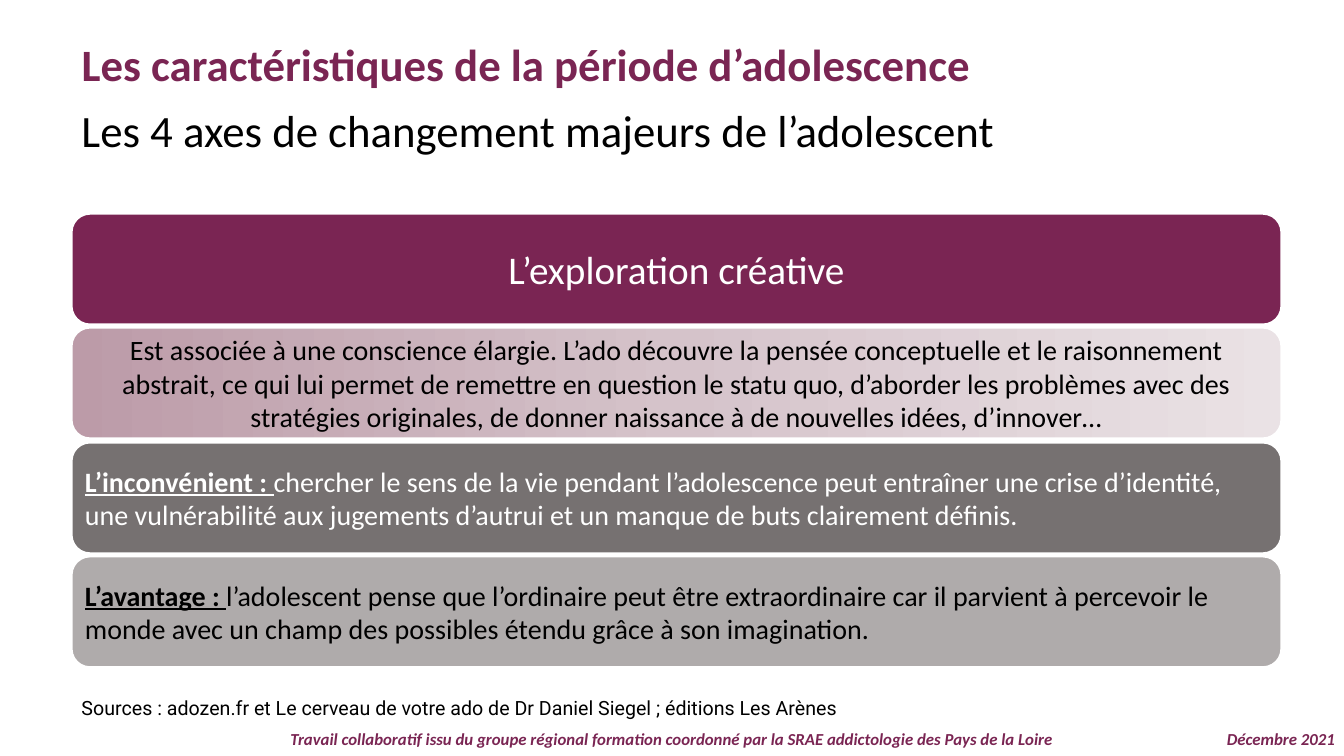
from copy import deepcopy

from pptx import Presentation
from pptx import util as u
from pptx.dml.color import RGBColor
from pptx.enum import shapes, text
from pptx.oxml.ns import qn

PX = 9144
PLUM, BLACK, WHITE = "7A2553", "000000", "FFFFFF"
LEFT, CENTER, RIGHT = text.PP_ALIGN.LEFT, text.PP_ALIGN.CENTER, text.PP_ALIGN.RIGHT
TOP, MIDDLE = text.MSO_ANCHOR.TOP, text.MSO_ANCHOR.MIDDLE


def px(n):
    return u.Emu(n * PX)


def rgb(value):
    return RGBColor.from_string(value)


class Deck:
    """Holds the style and the current slide, and draws its elements."""

    family = "Calibri"

    def __init__(self, width, height):
        self.prs = Presentation()
        self.prs.slide_width, self.prs.slide_height = px(width), px(height)
        self.slide = self.prs.slides.add_slide(self.prs.slide_layouts[5])

    def set_text(self, shape, runs, size, color, align=LEFT, anchor=TOP,
                 inset=None, family=None, **spacing):
        frame = shape.text_frame
        layout = {"word_wrap": True, "auto_size": text.MSO_AUTO_SIZE.NONE,
                  "vertical_anchor": anchor}
        if inset is not None:
            sides = ("left", "top", "right", "bottom")
            layout.update({f"margin_{side}": px(inset) for side in sides})
        for key, value in layout.items():
            setattr(frame, key, value)
        paragraph = frame.paragraphs[0]
        for key, value in {"alignment": align, **spacing}.items():
            setattr(paragraph, key, value)
        for words, emphasis in runs:
            run = paragraph.add_run()
            run.text = words
            style = {"name": family or self.family, "size": u.Pt(size), **emphasis}
            for key, value in style.items():
                setattr(run.font, key, value)
            run.font.color.rgb = rgb(color)

    def title(self, box, words, size, color):
        heading = self.slide.shapes.title
        for key, value in zip(("left", "top", "width", "height"), box):
            setattr(heading, key, px(value))
        self.set_text(heading, [(words, {"bold": True})], size, color)

    def label(self, box, words, size, color, emphasis=None, **style):
        textbox = self.slide.shapes.add_textbox(*map(px, box))
        self.set_text(textbox, [(words, emphasis or {})], size, color, **style)

    def band(self, box, fill, runs, size, color, **style):
        band = self.slide.shapes.add_shape(
            shapes.MSO_SHAPE.ROUNDED_RECTANGLE, *map(px, box))
        band.shadow.inherit = False
        band.line.color.rgb = rgb(WHITE)
        band.line.width = u.Pt(1.5)
        if isinstance(fill, str):
            band.fill.solid()
            band.fill.fore_color.rgb = rgb(fill)
        else:
            self.gradient(band, fill)
        self.set_text(band, runs, size, color, anchor=MIDDLE, **style)

    def gradient(self, shape, colors):
        shape.fill.gradient()
        shape.fill.gradient_angle = 0
        stops = shape._element.spPr.find(qn("a:gradFill")).find(qn("a:gsLst"))
        for _ in colors[2:]:
            stops.append(deepcopy(stops[-1]))
        for i, (stop, color) in enumerate(zip(shape.fill.gradient_stops, colors)):
            stop.position = i / (len(colors) - 1)
            stop.color.rgb = rgb(color)


def main():
    deck = Deck(1333, 750)
    lead = {"bold": True, "underline": True}
    footer = {"bold": True, "italic": True}

    deck.title((71, 31, 1014, 64),
               "Les caractéristiques de la période d’adolescence", 32, PLUM)
    deck.label((71, 95, 1134, 74), "Les 4 axes de changement majeurs de l’adolescent",
               32, BLACK, anchor=MIDDLE, line_spacing=0.9)

    bands = [
        (PLUM, WHITE, 28, CENTER, 12, [("L’exploration créative", {})]),
        (("BC9BA8", "D5C3CA", "EAE2E5"), BLACK, 20, CENTER, 8, [
            ("Est associée à une conscience élargie. L’ado découvre la pensée "
             "conceptuelle et le raisonnement abstrait, ce qui lui permet de remettre "
             "en question le statu quo, d’aborder les problèmes avec des stratégies "
             "originales, de donner naissance à de nouvelles idées, d’innover…", {})]),
        ("767171", WHITE, 20, LEFT, 8, [
            ("L’inconvénient : ", lead),
            ("chercher le sens de la vie pendant l’adolescence peut entraîner une "
             "crise d’identité, une vulnérabilité aux jugements d’autrui et un manque "
             "de buts clairement définis.", {})]),
        ("AFABAB", BLACK, 20, LEFT, 8, [
            ("L’avantage : ", lead),
            ("l’adolescent pense que l’ordinaire peut être extraordinaire car il "
             "parvient à percevoir le monde avec un champ des possibles étendu grâce "
             "à son imagination.", {})]),
    ]
    first_top, height, gap = 212, 110, 3.4
    for row, (fill, color, size, align, inset, runs) in enumerate(bands):
        top = round(first_top + row * (height + gap))
        deck.band((71, top, 1200, height), fill, runs, size, color,
                  align=align, inset=inset)

    deck.label((71, 684, 1124, 34),
               "Sources : adozen.fr et Le cerveau de votre ado de Dr Daniel Siegel ; "
               "éditions Les Arènes", 14, BLACK, family="Roboto",
               line_spacing=1.07, space_after=u.Pt(8))
    deck.label((0, 720, 1333, 30),
               "Travail collaboratif issu du groupe régional formation coordonné par "
               "la SRAE addictologie des Pays de la Loire", 12, PLUM, footer,
               align=CENTER, line_spacing=0.9)
    deck.label((1189, 720, 145, 30), "Décembre 2021", 12, PLUM, footer,
               align=RIGHT, line_spacing=0.9)

    deck.prs.save("out.pptx")


if __name__ == "__main__":
    main()
